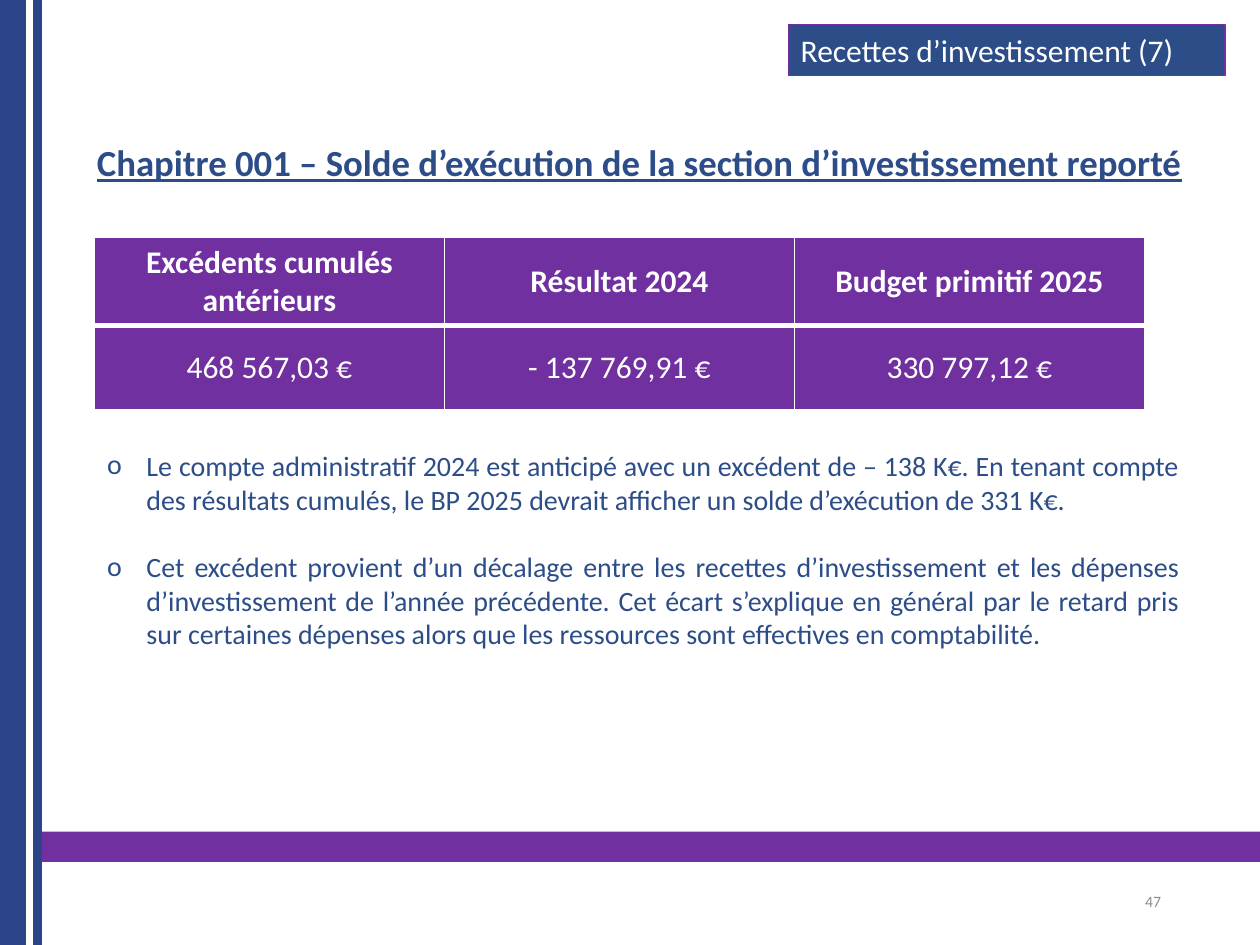
"""Build the budget slide on the carried-over investment balance."""
import lxml.etree
import pptx
import pptx.dml.color
import pptx.enum.shapes
import pptx.enum.text
import pptx.oxml.ns
import pptx.util

Pt = pptx.util.Pt
ALIGN = pptx.enum.text.PP_ALIGN
ANCHOR = pptx.enum.text.MSO_ANCHOR
PURPLE = pptx.dml.color.RGBColor(0x70, 0x30, 0xA0)
BAND_BLUE = pptx.dml.color.RGBColor(0x2C, 0x45, 0x88)
TEXT_BLUE = pptx.dml.color.RGBColor(0x2C, 0x4D, 0x88)
GREY = pptx.dml.color.RGBColor(0x8C, 0x8C, 0x8C)
WHITE = pptx.dml.color.RGBColor(0xFF, 0xFF, 0xFF)


def style_para(para, size, color, align, bold=False):
    para.alignment = align
    for span in para.runs:
        span.font.name = "Calibri"
        span.font.size = Pt(size)
        span.font.bold = bold
        span.font.color.rgb = color


def add_block(left, top, width, height, fill):
    block = slide.shapes.add_shape(
        pptx.enum.shapes.MSO_SHAPE.RECTANGLE, Pt(left), Pt(top), Pt(width), Pt(height))
    block.shadow.inherit = False
    block.fill.solid()
    block.fill.fore_color.rgb = fill
    block.line.fill.background()
    return block


deck = pptx.Presentation()
deck.slide_width, deck.slide_height = Pt(720), Pt(540)
slide = deck.slides.add_slide(deck.slide_layouts[1])

add_block(24, 475.2, 696, 17.3, PURPLE)
add_block(0, 0, 14.8, 540, BAND_BLUE)
add_block(19, 0, 5, 540, BAND_BLUE)

title = slide.shapes.title
title.left, title.top, title.width, title.height = Pt(39.6), Pt(79.2), Pt(660), Pt(45.4)
title.text_frame.text = "Chapitre 001 – Solde d’exécution de la section d’investissement reporté"
title.text_frame.vertical_anchor = ANCHOR.TOP
title.text_frame.margin_left = Pt(15.8)
title.text_frame.auto_size = pptx.enum.text.MSO_AUTO_SIZE.NONE
para = title.text_frame.paragraphs[0]
para.line_spacing = 0.9
style_para(para, 21, TEXT_BLUE, ALIGN.LEFT, bold=True)
para.runs[0].font.underline = True

page_number = slide.shapes.add_textbox(Pt(508.5), Pt(500.5), Pt(162), Pt(28.75))
page_number.text_frame.word_wrap = True
page_number.text_frame.vertical_anchor = ANCHOR.MIDDLE
page_number.text_frame.text = "47"
style_para(page_number.text_frame.paragraphs[0], 9, GREY, ALIGN.RIGHT)

rows = [
    ["Excédents cumulés antérieurs", "Résultat 2024", "Budget primitif 2025"],
    ["468 567,03 €", "- 137 769,91 €", "330 797,12 €"],
]
table = slide.shapes.add_table(2, 3, Pt(54), Pt(135.5), Pt(600), Pt(96)).table
for row_index, values in enumerate(rows):
    for column_index, value in enumerate(values):
        cell = table.cell(row_index, column_index)
        cell.text = value
        cell.vertical_anchor = ANCHOR.MIDDLE
        style_para(cell.text_frame.paragraphs[0], 18, WHITE, ALIGN.CENTER, bold=row_index == 0)
        properties = cell._tc.get_or_add_tcPr()
        for side in ("L", "R", "T", "B"):
            header_rule = (row_index, side) in ((0, "B"), (1, "T"))
            border = lxml.etree.SubElement(
                properties, pptx.oxml.ns.qn(f"a:ln{side}"), w=str(Pt(3 if header_rule else 1)))
            border_fill = lxml.etree.SubElement(border, pptx.oxml.ns.qn("a:solidFill"))
            lxml.etree.SubElement(border_fill, pptx.oxml.ns.qn("a:srgbClr"), val=str(WHITE))
        cell.fill.solid()
        cell.fill.fore_color.rgb = PURPLE

banner = add_block(450.5, 14.2, 249.5, 29, TEXT_BLUE)
banner.line.color.rgb = PURPLE
banner.line.width = Pt(0.75)
banner.text_frame.vertical_anchor = ANCHOR.TOP
banner.text_frame.text = "Recettes d’investissement (7)"
style_para(banner.text_frame.paragraphs[0], 18, WHITE, ALIGN.LEFT)

comments = [
    "Le compte administratif 2024 est anticipé avec un excédent de – 138 K€. En tenant compte "
    "des résultats cumulés, le BP 2025 devrait afficher un solde d’exécution de 331 K€.",
    "Cet excédent provient d’un décalage entre les recettes d’investissement et les dépenses "
    "d’investissement de l’année précédente. Cet écart s’explique en général par le retard pris "
    "sur certaines dépenses alors que les ressources sont effectives en comptabilité.",
]
body = slide.placeholders[1]
body.left, body.top, body.width, body.height = Pt(54), Pt(252.7), Pt(627.5), Pt(124)
body.text_frame.text = "\n".join(comments)
body.text_frame.auto_size = pptx.enum.text.MSO_AUTO_SIZE.NONE
for index, para in enumerate(body.text_frame.paragraphs):
    para.space_before = Pt(19.5 * index)
    properties = para._p.get_or_add_pPr()
    properties.set("marL", str(Pt(22.5)))
    properties.set("indent", str(-Pt(22.5)))
    lxml.etree.SubElement(properties, pptx.oxml.ns.qn("a:buFont"), typeface="Calibri")
    lxml.etree.SubElement(properties, pptx.oxml.ns.qn("a:buChar"), char="o")
    style_para(para, 16, TEXT_BLUE, ALIGN.JUSTIFY)

deck.save("out.pptx")
